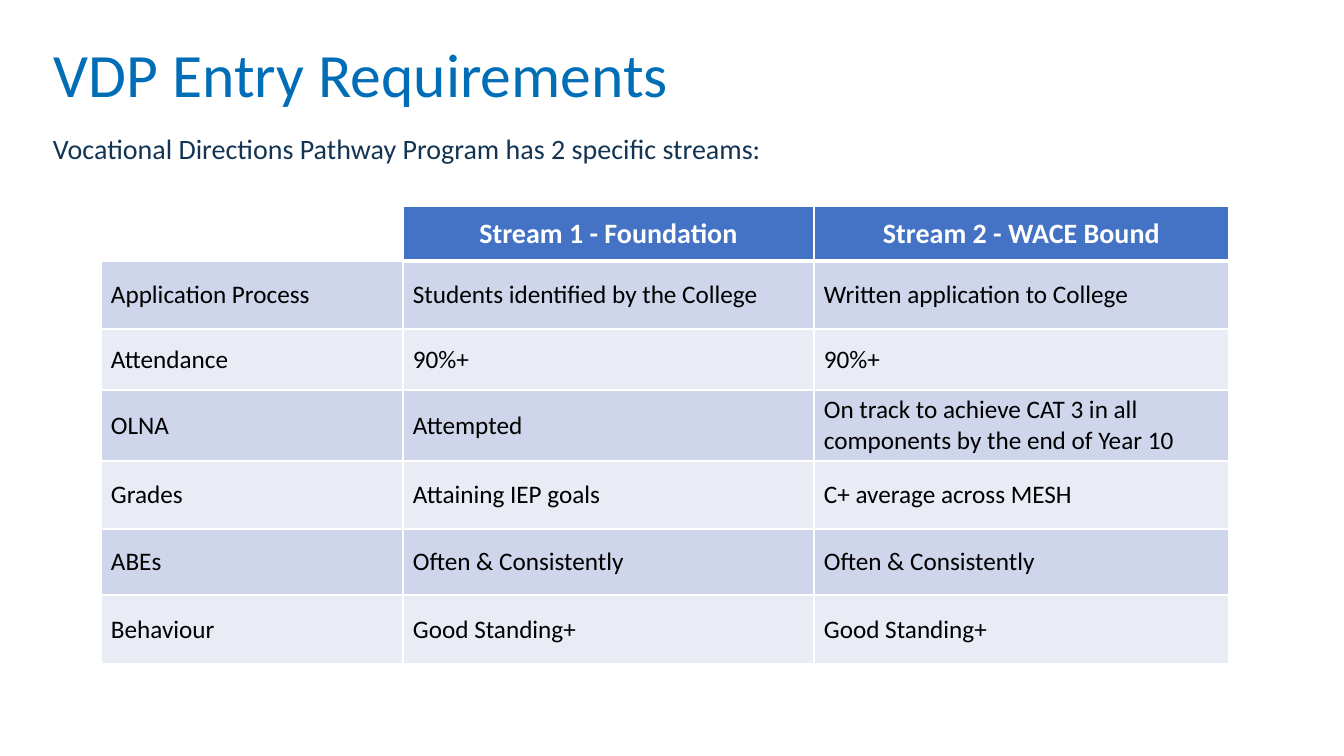
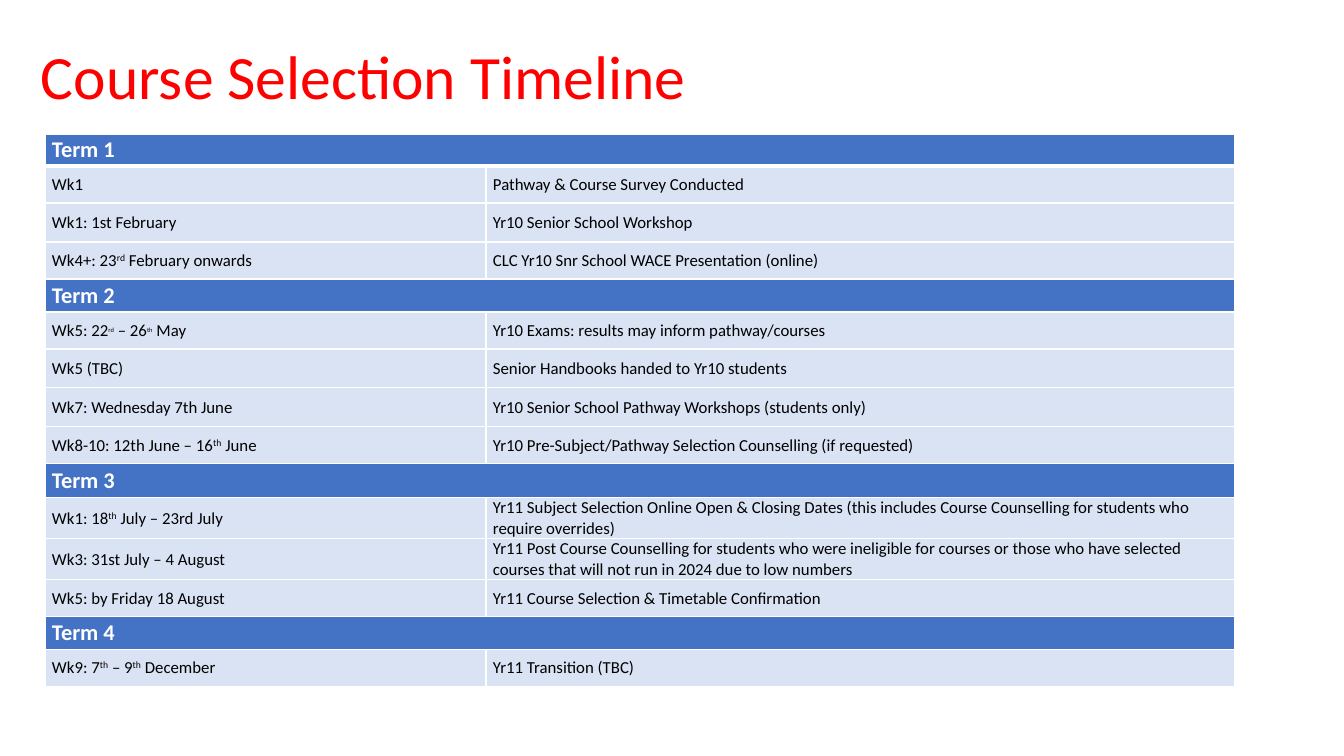
import pptx
import pptx.dml.color
import pptx.enum.text
import pptx.oxml.ns
import pptx.util
from lxml import etree

RGB = pptx.dml.color.RGBColor
ALIGN = pptx.enum.text.PP_ALIGN
ANCHOR = pptx.enum.text.MSO_ANCHOR

WHITE = RGB(0xFF, 0xFF, 0xFF)
BLACK = RGB(0x00, 0x00, 0x00)
RED = RGB(0xFF, 0x00, 0x00)
TITLE_BLUE = RGB(0x00, 0x6E, 0xB6)
NAVY = RGB(0x13, 0x35, 0x53)
HEADER_BLUE = RGB(0x44, 0x72, 0xC4)
BAND_DARK = RGB(0xCF, 0xD5, 0xEA)
BAND_LIGHT = RGB(0xE9, 0xEB, 0xF5)
PALE_BLUE = RGB(0xDA, 0xE3, 0xF3)

FONT = "Calibri"
EMU_PER_PX = 914400 / 100.8


def px(length):
    return pptx.util.Emu(round(length * EMU_PER_PX))


def write(frame, text, size, color=BLACK, bold=False, align=ALIGN.LEFT,
          spacing=None, superscript_size=None):
    paragraph = frame.paragraphs[0]
    paragraph.alignment = align
    if spacing:
        paragraph.line_spacing = spacing
    for index, piece in enumerate(text.split("^")):
        raised = index % 2 == 1
        run = paragraph.add_run()
        run.text = piece
        run.font.name = FONT
        run.font.size = pptx.util.Pt(superscript_size or size if raised else size)
        run.font.bold = bold
        run.font.color.rgb = color
        if raised:
            run.font._element.set("baseline", "30000")


class Deck:
    def __init__(self):
        self.presentation = pptx.Presentation()
        self.presentation.slide_width = px(1344)
        self.presentation.slide_height = px(756)
        self.slide = None

    def new_slide(self):
        self.slide = self.presentation.slides.add_slide(self.presentation.slide_layouts[6])
        self.slide.background.fill.solid()
        self.slide.background.fill.fore_color.rgb = WHITE

    def text(self, left, top, width, height, text, anchor=ANCHOR.TOP, **style):
        frame = self.slide.shapes.add_textbox(px(left), px(top), px(width), px(height)).text_frame
        frame.word_wrap = True
        frame.vertical_anchor = anchor
        write(frame, text, **style)

    def title(self, left, top, width, height, text, color):
        self.text(left, top, width, height, text, ANCHOR.MIDDLE,
                  size=44, color=color, spacing=0.9)

    def borders(self, cell, **widths):
        properties = cell._tc.get_or_add_tcPr()
        for side in "LRTB":
            line = etree.SubElement(properties, pptx.oxml.ns.qn(f"a:ln{side}"),
                                    w=str(pptx.util.Pt(widths.get(side, 1))))
            fill = etree.SubElement(line, pptx.oxml.ns.qn("a:solidFill"))
            etree.SubElement(fill, pptx.oxml.ns.qn("a:srgbClr"), val=str(WHITE))

    def table(self, left, top, widths, rows, margins):
        heights = [height for _, height, _, _ in rows]
        table = self.slide.shapes.add_table(
            len(rows), len(widths), px(left), px(top), px(sum(widths)), px(sum(heights))).table
        table.first_row = False
        table.horz_banding = False
        for column, width in zip(table.columns, widths):
            column.width = px(width)
        header_texts = rows[0][0]
        for row_index, (texts, height, fill, style) in enumerate(rows):
            table.rows[row_index].height = px(height)
            if len(texts) == 1:
                table.cell(row_index, 0).merge(table.cell(row_index, len(widths) - 1))
            for column_index in range(len(widths)):
                cell = table.cell(row_index, column_index)
                header_text = header_texts[min(column_index, len(header_texts) - 1)]
                header_edge = 3 if header_text else 1
                self.borders(cell, T=header_edge if row_index == 1 else 1,
                             B=header_edge if row_index == 0 else 1)
                cell.margin_left = cell.margin_right = px(margins[0])
                cell.margin_top = cell.margin_bottom = px(margins[1])
                cell.vertical_anchor = ANCHOR.MIDDLE
                text = texts[column_index] if column_index < len(texts) else ""
                blank = not text and not cell.is_spanned
                cell.fill.solid()
                cell.fill.fore_color.rgb = WHITE if blank else fill
                if text:
                    write(cell.text_frame, text, **style)


def entry_requirements(deck):
    deck.new_slide()
    deck.title(44, 28, 938, 99, "VDP Entry Requirements", TITLE_BLUE)
    deck.text(43, 127, 878, 44, "Vocational Directions Pathway Program has 2 specific streams:",
              size=20, color=NAVY)
    header = dict(size=20, color=WHITE, bold=True, align=ALIGN.CENTER)
    requirements = [
        (68, "Application Process", "Students identified by the College",
         "Written application to College"),
        (61, "Attendance", "90%+", "90%+"),
        (71, "OLNA", "Attempted",
         "On track to achieve CAT 3 in all components by the end of Year 10"),
        (68, "Grades", "Attaining IEP goals", "C+ average across MESH"),
        (66, "ABEs", "Often & Consistently", "Often & Consistently"),
        (69, "Behaviour", "Good Standing+", "Good Standing+"),
    ]
    rows = [(("", "Stream 1 - Foundation", "Stream 2 - WACE Bound"), 55, HEADER_BLUE, header)]
    for index, (height, *texts) in enumerate(requirements):
        rows.append((texts, height, (BAND_DARK, BAND_LIGHT)[index % 2], dict(size=18)))
    deck.table(101, 206, [302, 411, 415], rows, margins=(10, 5))


def selection_timeline(deck):
    deck.new_slide()
    deck.title(31, 28, 1156, 103, "Course Selection Timeline", RED)
    term_style = dict(size=16, color=WHITE, bold=True)
    terms = [
        ("Term 1", 32, [
            (37, "Wk1", "Pathway & Course Survey Conducted"),
            (39, "Wk1: 1st February", "Yr10 Senior School Workshop"),
            (37, "Wk4+: 23^rd^ February onwards",
             "CLC Yr10 Snr School WACE Presentation (online)"),
        ]),
        ("Term 2", 33, [
            (37, "Wk5: 22^rd^ – 26^th^ May",
             "Yr10 Exams: results may inform pathway/courses", 8),
            (39, "Wk5 (TBC)", "Senior Handbooks handed to Yr10 students"),
            (39, "Wk7: Wednesday 7th June",
             "Yr10 Senior School Pathway Workshops (students only)"),
            (37, "Wk8-10: 12th June – 16^th^ June",
             "Yr10 Pre-Subject/Pathway Selection Counselling (if requested)"),
        ]),
        ("Term 3", 34, [
            (41, "Wk1: 18^th^ July – 23rd July",
             "Yr11 Subject Selection Online Open & Closing Dates (this includes "
             "Course Counselling for students who require overrides)"),
            (41, "Wk3: 31st July – 4 August",
             "Yr11 Post Course Counselling for students who were ineligible for courses or "
             "those who have selected courses that will not run in 2024 due to low numbers"),
            (37, "Wk5: by Friday 18 August", "Yr11 Course Selection & Timetable Confirmation"),
        ]),
        ("Term 4", 33, [
            (37, "Wk9: 7^th^ – 9^th^ December", "Yr11 Transition (TBC)"),
        ]),
    ]
    rows = []
    for term, term_height, events in terms:
        rows.append(((term,), term_height, HEADER_BLUE, term_style))
        for height, when, what, *superscript in events:
            style = dict(size=12, superscript_size=superscript[0] if superscript else None)
            rows.append(((when, what), height, PALE_BLUE, style))
    deck.table(45, 134, [441, 749], rows, margins=(7, 0))


def main():
    deck = Deck()
    entry_requirements(deck)
    selection_timeline(deck)
    deck.presentation.save("out.pptx")


if __name__ == "__main__":
    main()
